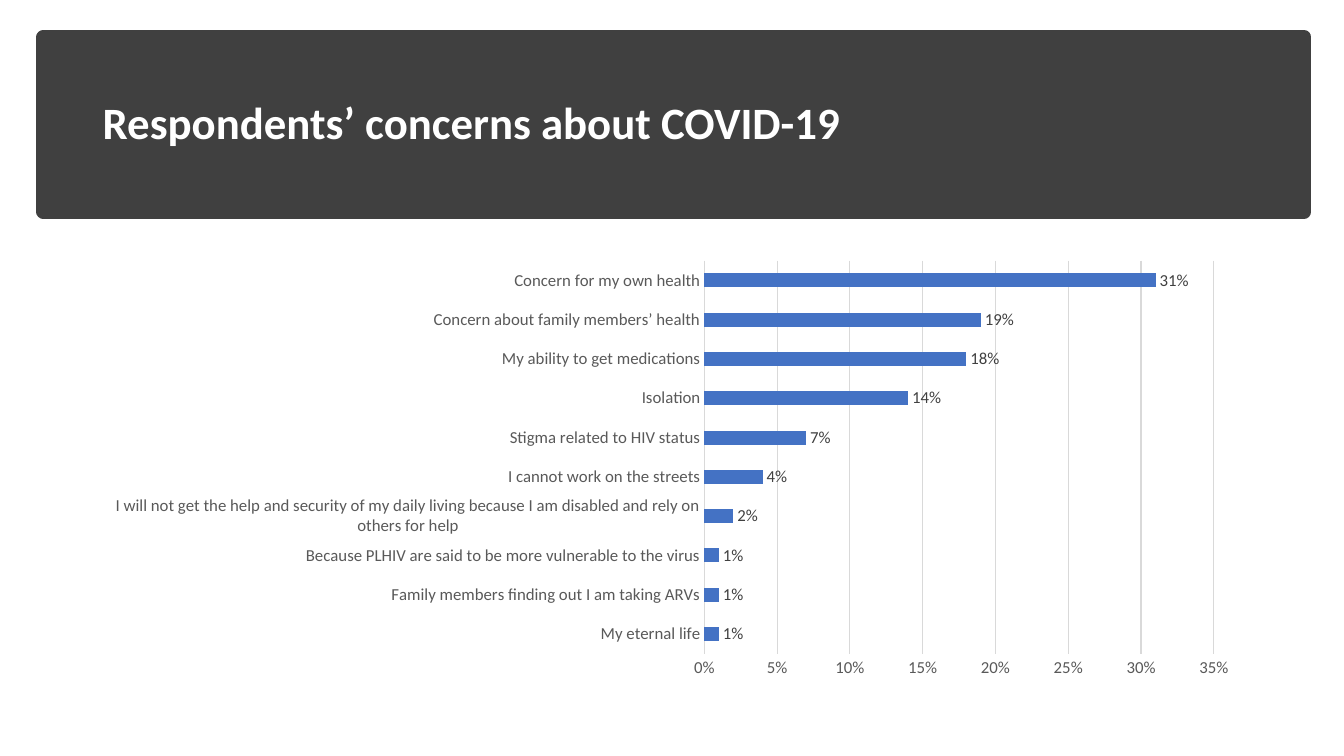
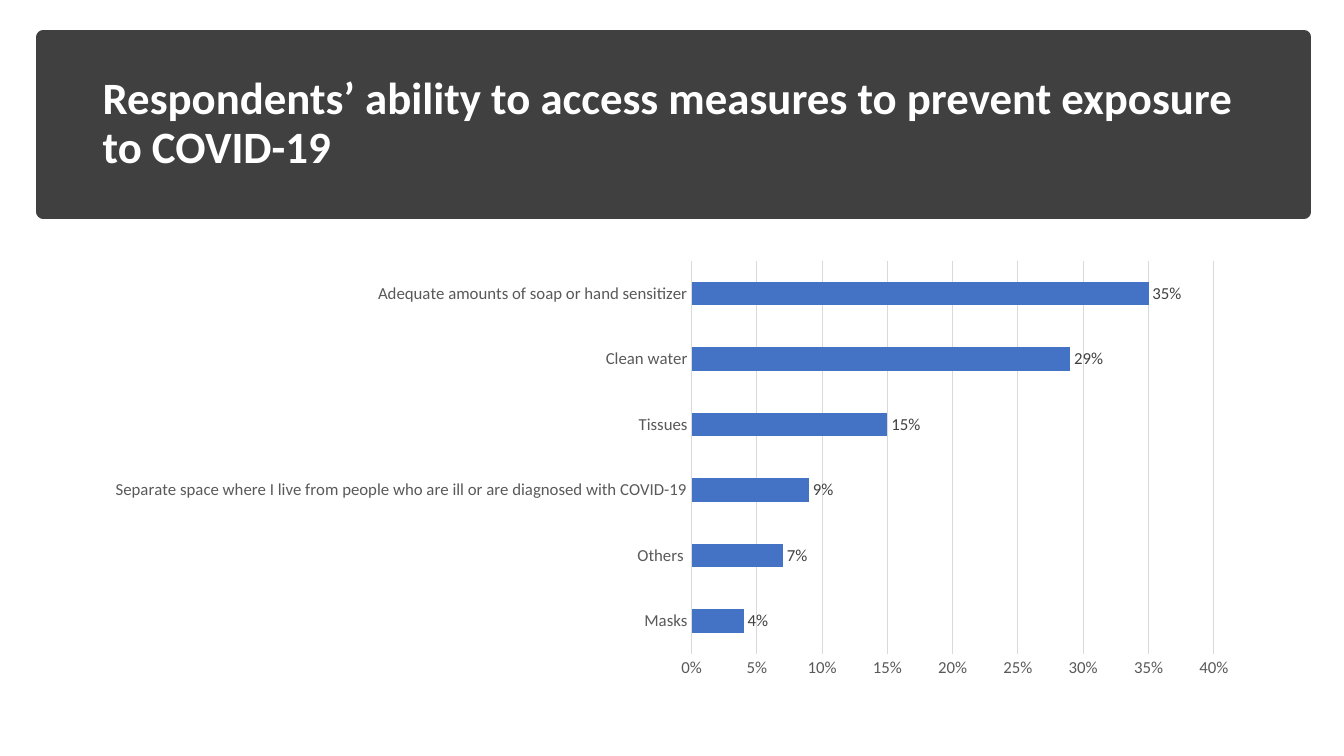
import pptx
import pptx.chart.data
import pptx.dml.color
import pptx.enum.chart
import pptx.enum.shapes
import pptx.enum.text
import pptx.util

RGBColor = pptx.dml.color.RGBColor
WHITE = RGBColor(0xFF, 0xFF, 0xFF)
CHARCOAL = RGBColor(0x40, 0x40, 0x40)
GREY = RGBColor(0x59, 0x59, 0x59)
RULE = RGBColor(0xD9, 0xD9, 0xD9)
BLUE = RGBColor(0x44, 0x72, 0xC4)
FONT = "Calibri"

# Slide grid: 160 columns by 90 rows
WIDTH, HEIGHT = pptx.util.Inches(13.33), pptx.util.Inches(7.5)
COL, ROW = WIDTH / 160, HEIGHT / 90

# Boxes: left, top, width, height in columns and rows
BAND = (5.16, 4.44, 150.12, 20.76)
CHART = (11, 30, 138, 51.72)
TITLE_INSET_X, TITLE_INSET_Y, TITLE_WIDTH = 5.88, 1.68, 138

SLIDES = [
    ("Respondents’ concerns about COVID-19", 0.35, [
        ("My eternal life", 0.01),
        ("Family members finding out I am taking ARVs", 0.01),
        ("Because PLHIV are said to be more vulnerable to the virus", 0.01),
        ("I will not get the help and security of my daily living because "
         "I am disabled and rely on others for help", 0.02),
        ("I cannot work on the streets", 0.04),
        ("Stigma related to HIV status", 0.07),
        ("Isolation", 0.14),
        ("My ability to get medications", 0.18),
        ("Concern about family members’ health", 0.19),
        ("Concern for my own health", 0.31),
    ]),
    ("Respondents’ ability to access measures to prevent exposure to COVID-19", 0.4, [
        ("Masks", 0.04),
        ("Others ", 0.07),
        ("Separate space where I live from people who are ill "
         "or are diagnosed with COVID-19", 0.09),
        ("Tissues", 0.15),
        ("Clean water", 0.29),
        ("Adequate amounts of soap or hand sensitizer", 0.35),
    ]),
]


def place(box):
    """Turn a grid box into slide lengths."""
    left, top, width, height = box
    return [round(n) for n in (left * COL, top * ROW, width * COL, height * ROW)]


def style_font(font, size, color, bold=False):
    font.name = FONT
    font.size = pptx.util.Pt(size)
    font.bold = bold
    font.color.rgb = color


def add_text(slide, box, text, size=32, color=WHITE, bold=False, spacing=0.9):
    sp = slide.shapes.add_textbox(*place(box))
    tf = sp.text_frame
    tf.word_wrap = True
    tf.vertical_anchor = pptx.enum.text.MSO_ANCHOR.MIDDLE
    p = tf.paragraphs[0]
    p.line_spacing = spacing
    r = p.add_run()
    r.text = text
    style_font(r.font, size, color, bold)


def add_title_band(slide, box, title):
    # Dark band
    sp = slide.shapes.add_shape(pptx.enum.shapes.MSO_SHAPE.RECTANGLE, *place(box))
    sp.shadow.inherit = False
    sp.fill.solid()
    sp.fill.fore_color.rgb = CHARCOAL
    sp.line.color.rgb = CHARCOAL
    sp.line.width = pptx.util.Pt(10)

    # Title inside the band
    left, top, _, height = box
    title_box = (left + TITLE_INSET_X, top + TITLE_INSET_Y,
                 TITLE_WIDTH, height - 2 * TITLE_INSET_Y)
    add_text(slide, title_box, title, bold=True)


def style_rule(line):
    line.color.rgb = RULE
    line.width = pptx.util.Pt(0.75)


def add_bar_chart(slide, box, rows, maximum):
    # Data
    names, values = zip(*rows)
    data = pptx.chart.data.CategoryChartData(number_format="0%")
    data.categories = names
    data.add_series("Series 1", values)
    chart = slide.shapes.add_chart(
        pptx.enum.chart.XL_CHART_TYPE.BAR_CLUSTERED, *place(box), data).chart
    chart.has_legend = False
    chart.has_title = False
    chart.font.name = FONT
    chart.font.size = pptx.util.Pt(10)

    # Axes
    for axis in (chart.category_axis, chart.value_axis):
        axis.major_tick_mark = pptx.enum.chart.XL_TICK_MARK.NONE
        axis.minor_tick_mark = pptx.enum.chart.XL_TICK_MARK.NONE
        style_font(axis.tick_labels.font, 12, GREY)
    style_rule(chart.category_axis.format.line)
    scale = chart.value_axis
    scale.minimum_scale, scale.maximum_scale = 0, maximum
    scale.major_unit = 0.05
    scale.format.line.fill.background()
    scale.has_major_gridlines = True
    style_rule(scale.major_gridlines.format.line)
    scale.tick_labels.number_format = "0%"
    scale.tick_labels.number_format_is_linked = False

    # Bars and value labels
    plot = chart.plots[0]
    plot.gap_width = 182
    plot.vary_by_categories = False
    bars = plot.series[0]
    bars.format.fill.solid()
    bars.format.fill.fore_color.rgb = BLUE
    labels = bars.data_labels
    labels.show_value = True
    labels.number_format = "0%"
    labels.number_format_is_linked = False
    labels.position = pptx.enum.chart.XL_LABEL_POSITION.OUTSIDE_END
    style_font(labels.font, 12, CHARCOAL)


def main():
    prs = pptx.Presentation()
    prs.slide_width, prs.slide_height = WIDTH, HEIGHT
    for title, maximum, rows in SLIDES:
        s = prs.slides.add_slide(prs.slide_layouts[6])
        add_title_band(s, BAND, title)
        add_bar_chart(s, CHART, rows, maximum)
    prs.save("out.pptx")


if __name__ == "__main__":
    main()
